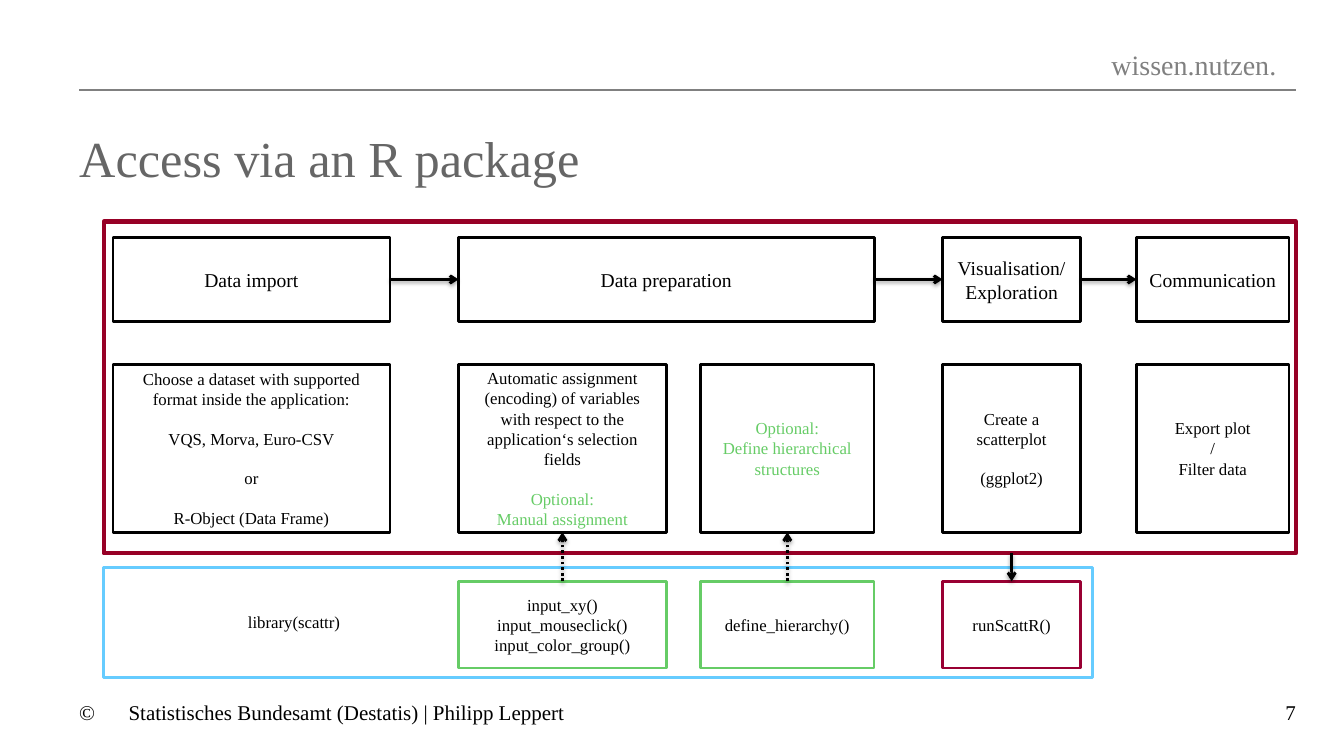
import pptx
import pptx.util
import pptx.dml.color
import pptx.enum.dml
import pptx.enum.shapes
import pptx.enum.text
import lxml.etree

Pt = pptx.util.Pt
RGBColor = pptx.dml.color.RGBColor
ALIGN = pptx.enum.text.PP_ALIGN
ANCHOR = pptx.enum.text.MSO_ANCHOR
NS = "http://schemas.openxmlformats.org/drawingml/2006/main"

FONT = "Times New Roman"
BLACK = RGBColor(0x00, 0x00, 0x00)
WHITE = RGBColor(0xFF, 0xFF, 0xFF)
RULE_GRAY = RGBColor(0x80, 0x80, 0x80)
TITLE_GRAY = RGBColor(0x66, 0x66, 0x66)
GREEN = RGBColor(0x66, 0xCC, 0x66)
BLUE = RGBColor(0x66, 0xCC, 0xFF)
CRIMSON = RGBColor(0x99, 0x00, 0x33)
FRAME_RED = RGBColor(0x97, 0x00, 0x26)

# Columns as (offset from the frame's left edge, width)
IMPORT, ASSIGN, HIERARCHY, EXPLORE, SHARE = (
    (6.5, 198), (253.5, 148.5), (426.5, 124), (599.4, 98.8), (738, 109))
PREPARE = (ASSIGN[0], HIERARCHY[0] + HIERARCHY[1] - ASSIGN[0])
LINE_GAP = 14


def add_xml(parent, tag, **attributes):
    return lxml.etree.SubElement(parent, f"{{{NS}}}{tag}", attributes)


def write(frame, text, size=12, color=BLACK, align=ALIGN.CENTER, tab=None,
          gaps=(), accents=()):
    """Fill a frame line by line; gaps and accents hold line numbers."""
    for number, line in enumerate(text.split("\n")):
        para = frame.add_paragraph() if number else frame.paragraphs[0]
        para.alignment = align
        if number in gaps:
            para.space_before = Pt(LINE_GAP)
        if tab:
            stops = add_xml(para._p.get_or_add_pPr(), "tabLst")
            add_xml(stops, "tab", pos=str(Pt(tab)), algn="l")
        span = para.add_run()
        span.text = line
        span.font.name = FONT
        span.font.size = Pt(size)
        span.font.color.rgb = GREEN if number in accents else color


def add_label(page, box, text, anchor=ANCHOR.TOP, wrap=True, **text_format):
    frame = page.shapes.add_textbox(*map(Pt, box)).text_frame
    frame.margin_left = frame.margin_right = 0
    frame.margin_top = frame.margin_bottom = 0
    frame.word_wrap = wrap
    frame.vertical_anchor = anchor
    write(frame, text, **text_format)


def add_box(page, box, line=BLACK, width=2, fill=WHITE, text="", indent=7.2,
            **text_format):
    shape = page.shapes.add_shape(
        pptx.enum.shapes.MSO_SHAPE.RECTANGLE, *map(Pt, box))
    shape.shadow.inherit = False
    if fill is None:
        shape.fill.background()
    else:
        shape.fill.solid()
        shape.fill.fore_color.rgb = fill
    shape.line.color.rgb = line
    shape.line.width = Pt(width)
    if text:
        shape.text_frame.word_wrap = True
        shape.text_frame.vertical_anchor = ANCHOR.MIDDLE
        shape.text_frame.margin_left = Pt(indent)
        write(shape.text_frame, text, **text_format)
    return shape


def add_line(page, start, end, color, width):
    line = page.shapes.add_connector(
        pptx.enum.shapes.MSO_CONNECTOR.STRAIGHT, *map(Pt, start + end))
    line.line.color.rgb = color
    line.line.width = Pt(width)
    return line, add_xml(line._element.spPr, "effectLst")


def add_arrow(page, target, end_site, source=None, begin_site=0,
              start=(0, 0), dotted=False):
    """Arrow to the side of a box, from another box or a free point."""
    arrow, effects = add_line(page, start, (0, 0), BLACK, 2)
    if source is not None:
        arrow.begin_connect(source, begin_site)
    arrow.end_connect(target, end_site)
    if dotted:
        arrow.line.dash_style = pptx.enum.dml.MSO_LINE.ROUND_DOT
    add_xml(arrow.line._get_or_add_ln(), "tailEnd", type="arrow")
    shadow = add_xml(effects, "outerShdw", blurRad=str(Pt(3.1)),
                     dist=str(Pt(1.6)), dir="5400000", rotWithShape="0")
    add_xml(add_xml(shadow, "srgbClr", val="000000"), "alpha", val="38000")


def add_header(page, box):
    left, top, width, height = box
    add_line(page, (left, top + 30.2), (left + width, top + 30.2),
             RULE_GRAY, 1.5)
    add_label(page, (left + 697.6, top, 198, 24.5), "wissen.nutzen.",
              anchor=ANCHOR.MIDDLE, wrap=False, size=20, color=RULE_GRAY)
    add_label(page, (left, top + 56.8, width, height - 56.8),
              "Access via an R package", size=36, color=TITLE_GRAY,
              align=ALIGN.LEFT)


def add_workflow(page, box):
    left, top, width, height = box
    add_box(page, box, line=FRAME_RED, width=3, fill=None)

    # Steps, joined from left to right
    steps = [
        add_box(page, (left + x, top + 11.4, w, 60), text=text, size=14)
        for (x, w), text in (
            (IMPORT, "Data import"), (PREPARE, "Data preparation"),
            (EXPLORE, "Visualisation/Exploration"),
            (SHARE, "Communication"))]
    for source, target in zip(steps, steps[1:]):
        add_arrow(page, target, 1, source, 3)

    # Details below each step: column, text, lines after a gap, green lines
    details = (
        (IMPORT, "Choose a dataset with supported format inside the "
         "application:\nVQS, Morva, Euro-CSV\nor\nR-Object (Data Frame)",
         (1, 2, 3), ()),
        (ASSIGN, "Automatic assignment\n(encoding) of variables with respect "
         "to the application‘s selection fields\nOptional:\n"
         "Manual assignment", (2,), (2, 3)),
        (HIERARCHY, "Optional:\nDefine hierarchical\nstructures",
         (), (0, 1, 2)),
        (EXPLORE, "Create a scatterplot\n(ggplot2)", (1,), ()),
        (SHARE, "Export plot\n/\nFilter data", (), ()))
    shapes = [
        add_box(page, (left + x, top + 102, w, 120), text=text, gaps=gaps,
                accents=accents)
        for (x, w), text, gaps, accents in details]
    return shapes[1], shapes[2]


def add_library(page, box, assign, hierarchy, frame_bottom):
    left, top, width, height = box
    add_box(page, box, line=BLUE, fill=None, text="library(scattr)",
            indent=103, align=ALIGN.LEFT)
    inputs, define, run = [
        add_box(page, (left + x, top + 10, w, 62), line=line, text=text)
        for (x, w), line, text in (
            (ASSIGN, GREEN,
             "input_xy()\ninput_mouseclick()\ninput_color_group()"),
            (HIERARCHY, GREEN, "define_hierarchy()"),
            (EXPLORE, CRIMSON, "runScattR()"))]
    add_arrow(page, assign, 2, inputs, 0, dotted=True)
    add_arrow(page, hierarchy, 2, define, 0, dotted=True)
    add_arrow(page, run, 0,
              start=(left + EXPLORE[0] + EXPLORE[1] / 2, frame_bottom))


def add_footer(page, box):
    left, top, width, height = box
    add_label(page, (left, top, 692, height),
              "© \tStatistisches Bundesamt (Destatis) | Philipp Leppert",
              anchor=ANCHOR.BOTTOM, size=15, align=ALIGN.LEFT, tab=35.3)
    add_label(page, (left + width - 68, top, 68, height), "7",
              anchor=ANCHOR.BOTTOM, size=15, align=ALIGN.RIGHT)


def main():
    deck = pptx.Presentation()
    deck.slide_width, deck.slide_height = Pt(960.5), Pt(540)
    page = deck.slides.add_slide(deck.slide_layouts[6])
    add_header(page, (56.6, 34, 869.4, 130))
    assign, hierarchy = add_workflow(page, (74.2, 158.2, 852, 237))
    add_library(page, (74.2, 405.2, 706.5, 78.5), assign, hierarchy, 395.2)
    add_footer(page, (56.6, 497, 869.4, 20.7))
    deck.save("out.pptx")


if __name__ == "__main__":
    main()
